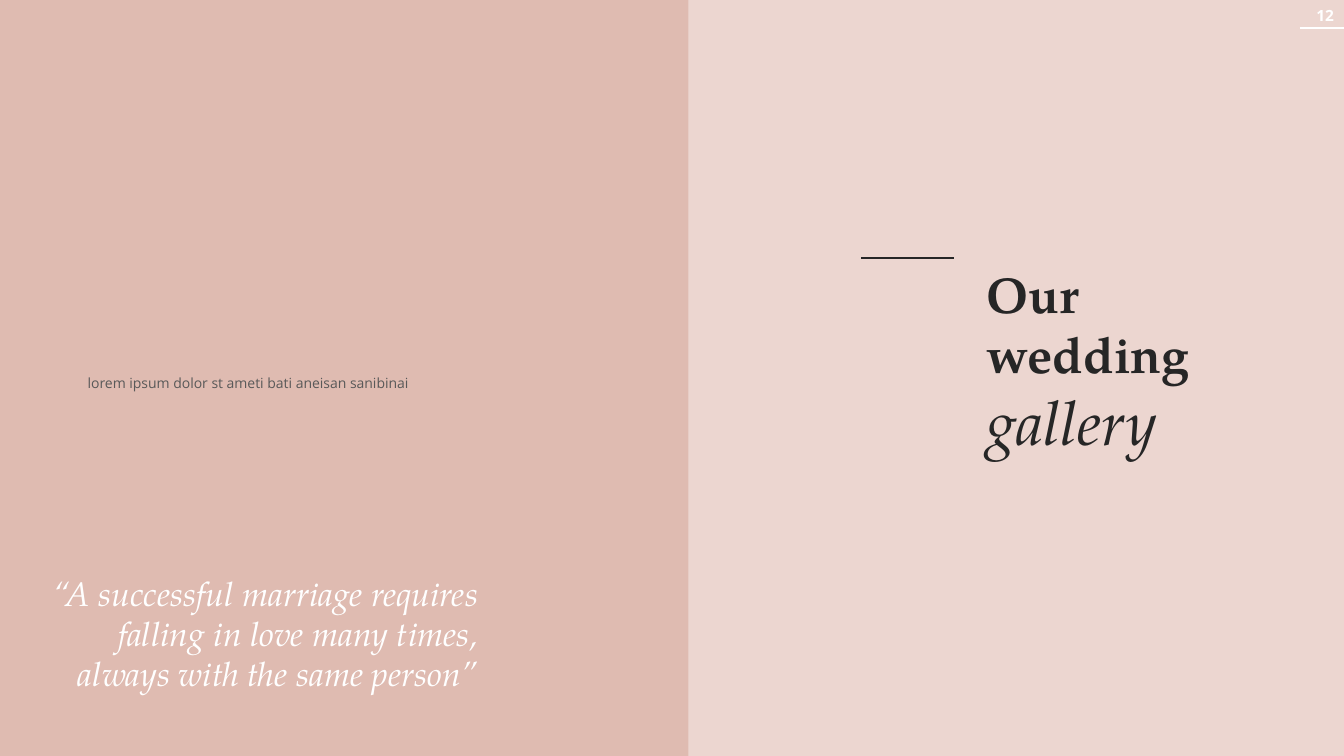
from pptx import Presentation
from pptx.dml.color import RGBColor
from pptx.enum.shapes import MSO_CONNECTOR, MSO_SHAPE
from pptx.enum.text import MSO_ANCHOR, PP_ALIGN
from pptx.oxml.ns import qn
from pptx.util import Inches, Pt

LEFT, CENTER, RIGHT = PP_ALIGN.LEFT, PP_ALIGN.CENTER, PP_ALIGN.RIGHT
TOP, MIDDLE = MSO_ANCHOR.TOP, MSO_ANCHOR.MIDDLE
RECT, STRAIGHT = MSO_SHAPE.RECTANGLE, MSO_CONNECTOR.STRAIGHT

COLORS = {"blush": "ECD6D0", "rose": "DFBBB1", "ink": "262626",
          "gray": "595959", "white": "FFFFFF"}
SERIF, SANS = "TeX Gyre Pagella", "Open Sans"
WIDTH, HEIGHT, SPLIT = 13.33, 7.5, 6.83

PANELS = [(SPLIT, WIDTH - SPLIT, "blush"), (0, SPLIT, "rose")]
RULES = [(8.54, 9.46, 2.56, "ink"), (12.89, WIDTH, 0.28, "white")]
TEXTS = [
    {"box": (9.69, 2.56, 2.25, 2.05), "color": "ink",
     "para": {"alignment": LEFT}, "anchor": TOP,
     "runs": [("Our wedding ", {"name": SERIF, "size": Pt(36), "bold": True}),
              ("gallery", {"name": SERIF, "size": Pt(44), "italic": True})]},
    {"box": (0.08, 5.63, 4.76, 1.31), "color": "white",
     "para": {"alignment": RIGHT}, "anchor": TOP,
     "runs": [("“A successful marriage requires falling in love many times, "
               "always with the same person”",
               {"name": SERIF, "size": Pt(24), "italic": True})]},
    {"box": (0.69, 3.58, 3.54, 0.33), "color": "gray",
     "para": {"alignment": CENTER, "line_spacing": 1.5}, "anchor": TOP,
     "runs": [("lorem ipsum dolor st ameti bati aneisan sanibinai",
               {"name": SANS, "size": Pt(10)})]},
    {"box": (12.73, 0, 0.6, 0.3), "color": "white",
     "para": {"alignment": RIGHT}, "anchor": MIDDLE,
     "runs": [("12", {"name": SANS, "size": Pt(11), "bold": True})]},
]


def rgb(name):
    return RGBColor.from_string(COLORS[name])


def set_attrs(obj, values):
    for key, value in values.items():
        setattr(obj, key, value)


def add_panel(s, left, width, color):
    sp = s.shapes.add_shape(RECT, Inches(left), 0, Inches(width), Inches(HEIGHT))
    sp.shadow.inherit = False
    sp.fill.solid()
    sp.fill.fore_color.rgb = rgb(color)
    sp.line.fill.background()


def add_rule(s, x1, x2, y, color):
    ln = s.shapes.add_connector(STRAIGHT, *map(Inches, (x1, y, x2, y)))
    ln.line.color.rgb = rgb(color)
    ln.line.width = Pt(1.5)
    sp_pr = ln._element.spPr
    sp_pr.append(sp_pr.makeelement(qn("a:effectLst"), {}))


def add_text(s, box, color, para, anchor, runs):
    tf = s.shapes.add_textbox(*map(Inches, box)).text_frame
    set_attrs(tf, {"word_wrap": True, "vertical_anchor": anchor})
    p = tf.paragraphs[0]
    set_attrs(p, para)
    for text, font in runs:
        r = p.add_run()
        r.text = text
        set_attrs(r.font, font)
        r.font.color.rgb = rgb(color)


def main():
    """Build the wedding gallery divider slide."""
    prs = Presentation()
    prs.slide_width, prs.slide_height = Inches(WIDTH), Inches(HEIGHT)
    s = prs.slides.add_slide(prs.slide_layouts[6])
    for panel in PANELS:
        add_panel(s, *panel)
    for rule in RULES:
        add_rule(s, *rule)
    for text in TEXTS:
        add_text(s, **text)
    prs.save("out.pptx")


if __name__ == "__main__":
    main()
